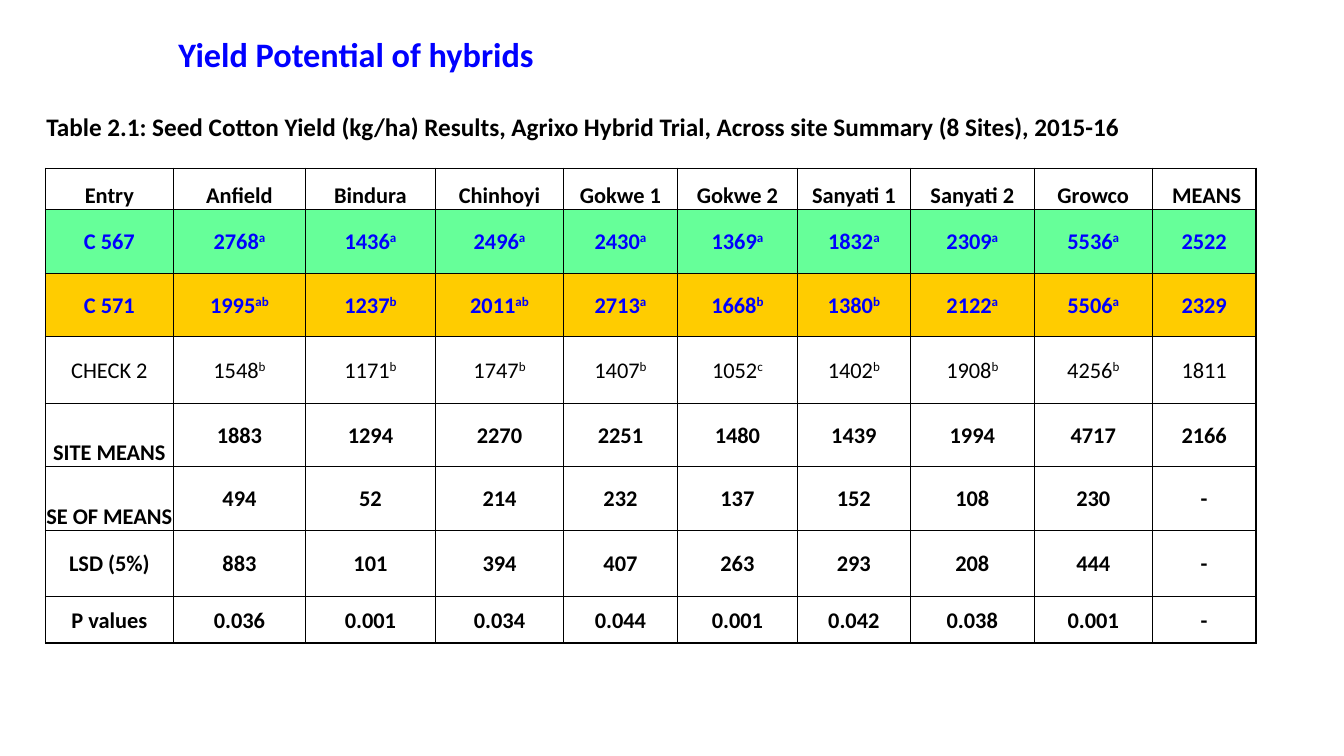
from dataclasses import dataclass
from typing import Optional

from lxml.etree import SubElement
from pptx import Presentation
from pptx.dml.color import RGBColor
from pptx.enum.text import MSO_ANCHOR, MSO_AUTO_SIZE, PP_ALIGN
from pptx.oxml.ns import qn
from pptx.util import Inches, Pt

BLACK = RGBColor(0x00, 0x00, 0x00)
BLUE = RGBColor(0x00, 0x00, 0xFF)
GREEN = RGBColor(0x66, 0xFF, 0x99)
AMBER = RGBColor(0xFF, 0xCC, 0x00)

THIN, THICK = 0.5, 1
CAPTION = ("Table 2.1: Seed Cotton Yield (kg/ha) Results, Agrixo Hybrid Trial, "
           "Across site Summary (8 Sites), 2015-16")
COLUMN_WIDTHS = [1.27, 1.31, 1.29, 1.27, 1.13, 1.19, 1.12, 1.23, 1.17, 1.03]
CAPTION_HEIGHT, GAP_HEIGHT = 0.63, 0.25


@dataclass
class Row:
    label: str
    values: str  # a letter group after ^ is raised
    height: float = 0.63
    fill: Optional[RGBColor] = None
    color: RGBColor = BLACK
    bold: bool = True
    label_anchor: MSO_ANCHOR = MSO_ANCHOR.MIDDLE
    top: float = THIN
    bottom: float = THIN


HEADER = ["Entry", "Anfield", "Bindura", "Chinhoyi", "Gokwe 1", "Gokwe 2",
          "Sanyati 1", "Sanyati 2", "Growco", " MEANS"]
HEADER_HEIGHT = 0.41
ROWS = [
    Row("C 567", "2768^a 1436^a 2496^a 2430^a 1369^a 1832^a 2309^a 5536^a 2522",
        fill=GREEN, color=BLUE),
    Row("C 571", "1995^ab 1237^b 2011^ab 2713^a 1668^b 1380^b 2122^a 5506^a 2329",
        fill=AMBER, color=BLUE),
    Row("CHECK 2", "1548^b 1171^b 1747^b 1407^b 1052^c 1402^b 1908^b 4256^b 1811",
        height=0.66, bold=False, bottom=THICK),
    Row("SITE MEANS", "1883 1294 2270 2251 1480 1439 1994 4717 2166",
        label_anchor=MSO_ANCHOR.BOTTOM, top=THICK),
    Row("SE OF MEANS", "494 52 214 232 137 152 108 230 -",
        label_anchor=MSO_ANCHOR.BOTTOM),
    Row("LSD (5%)", "883 101 394 407 263 293 208 444 -", height=0.66),
    Row("P values", "0.036 0.001 0.034 0.044 0.001 0.042 0.038 0.001 -",
        height=0.46, bottom=THICK),
]


def add_run(p, text: str, size: float, color: RGBColor, bold: bool = True):
    r = p.add_run()
    r.text = text
    for name, value in {"name": "Calibri", "size": Pt(size), "bold": bold}.items():
        setattr(r.font, name, value)
    r.font.color.rgb = color
    return r


def style_cell(cell, fill: Optional[RGBColor] = None, left: float = 0,
               right: float = 0, top: float = 0, bottom: float = 0,
               anchor: MSO_ANCHOR = MSO_ANCHOR.BOTTOM) -> None:
    """Set margins, borders in points (0 for none) and fill."""
    margins = {"margin_left": 0.01, "margin_right": 0.01,
               "margin_top": 0.01, "margin_bottom": 0}
    for name, value in margins.items():
        setattr(cell, name, Inches(value))
    cell.vertical_anchor = anchor
    tc_pr = cell._tc.get_or_add_tcPr()
    for tag, width in {"lnL": left, "lnR": right, "lnT": top, "lnB": bottom}.items():
        ln = SubElement(tc_pr, qn(f"a:{tag}"), w=str(Pt(width)))
        if width:
            solid = SubElement(ln, qn("a:solidFill"))
            SubElement(solid, qn("a:srgbClr"), val=str(BLACK))
        else:
            SubElement(ln, qn("a:noFill"))
    if fill is None:
        cell.fill.background()
    else:
        cell.fill.solid()
        cell.fill.fore_color.rgb = fill


def write_value(cell, text: str, color: RGBColor = BLACK, bold: bool = True) -> None:
    p = cell.text_frame.paragraphs[0]
    p.alignment = PP_ALIGN.CENTER
    number, _, letters = text.partition("^")
    add_run(p, number, 16, color, bold)
    if letters:
        r = add_run(p, letters, 16, color, bold)
        r._r.get_or_add_rPr().set("baseline", "30000")


def add_title(s) -> None:
    box = s.shapes.add_textbox(Inches(1.67), Inches(0.28), Inches(3.84), Inches(0.51))
    tf = box.text_frame
    for name, value in {"word_wrap": False, "vertical_anchor": MSO_ANCHOR.MIDDLE,
                        "auto_size": MSO_AUTO_SIZE.SHAPE_TO_FIT_TEXT}.items():
        setattr(tf, name, value)
    add_run(tf.paragraphs[0], "Yield Potential of hybrids", 24.5, BLUE)


def add_yield_table(s) -> None:
    heights = [CAPTION_HEIGHT, GAP_HEIGHT, HEADER_HEIGHT] + [row.height for row in ROWS]
    last = len(COLUMN_WIDTHS) - 1
    table = s.shapes.add_table(len(heights), last + 1, Inches(0.45), Inches(0.79),
                               Inches(sum(COLUMN_WIDTHS)), Inches(sum(heights))).table
    table.first_row = table.horz_banding = False
    for column, width in zip(table.columns, COLUMN_WIDTHS):
        column.width = Inches(width)
    for table_row, height in zip(table.rows, heights):
        table_row.height = Inches(height)

    # Caption, gap and header rows
    for c, heading in enumerate(HEADER):
        style_cell(table.cell(0, c))
        gap = table.cell(1, c)
        style_cell(gap, bottom=THICK)
        SubElement(gap.text_frame.paragraphs[0]._p, qn("a:endParaRPr"), sz="1200")
        cell = table.cell(2, c)
        style_cell(cell, left=THICK, right=THICK, top=THICK, bottom=THIN)
        write_value(cell, heading)
    caption = table.cell(0, 0)
    caption.merge(table.cell(0, last))
    add_run(caption.text_frame.paragraphs[0], CAPTION, 18, BLACK)

    # Yields and statistics
    for i, row in enumerate(ROWS, start=3):
        for c, text in enumerate([row.label] + row.values.split()):
            cell = table.cell(i, c)
            style_cell(cell, row.fill,
                       left=THICK if c == 0 else THIN,
                       right=THICK if c == last else THIN,
                       top=row.top, bottom=row.bottom,
                       anchor=row.label_anchor if c == 0 else MSO_ANCHOR.MIDDLE)
            write_value(cell, text, row.color, row.bold)


def main() -> None:
    prs = Presentation()
    prs.slide_width, prs.slide_height = Inches(13.33), Inches(7.5)
    s = prs.slides.add_slide(prs.slide_layouts[6])
    add_title(s)
    add_yield_table(s)
    prs.save("out.pptx")


if __name__ == "__main__":
    main()
